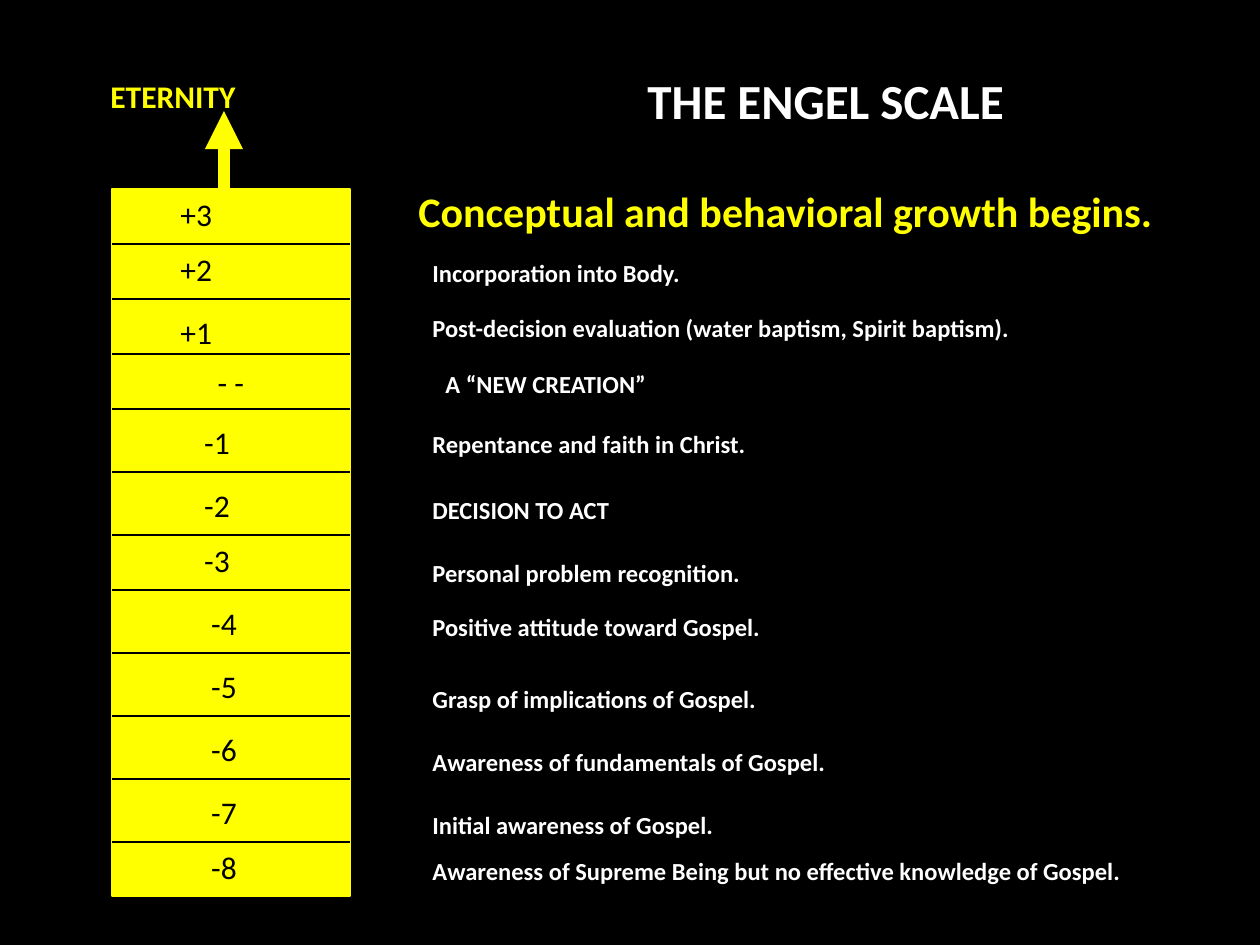
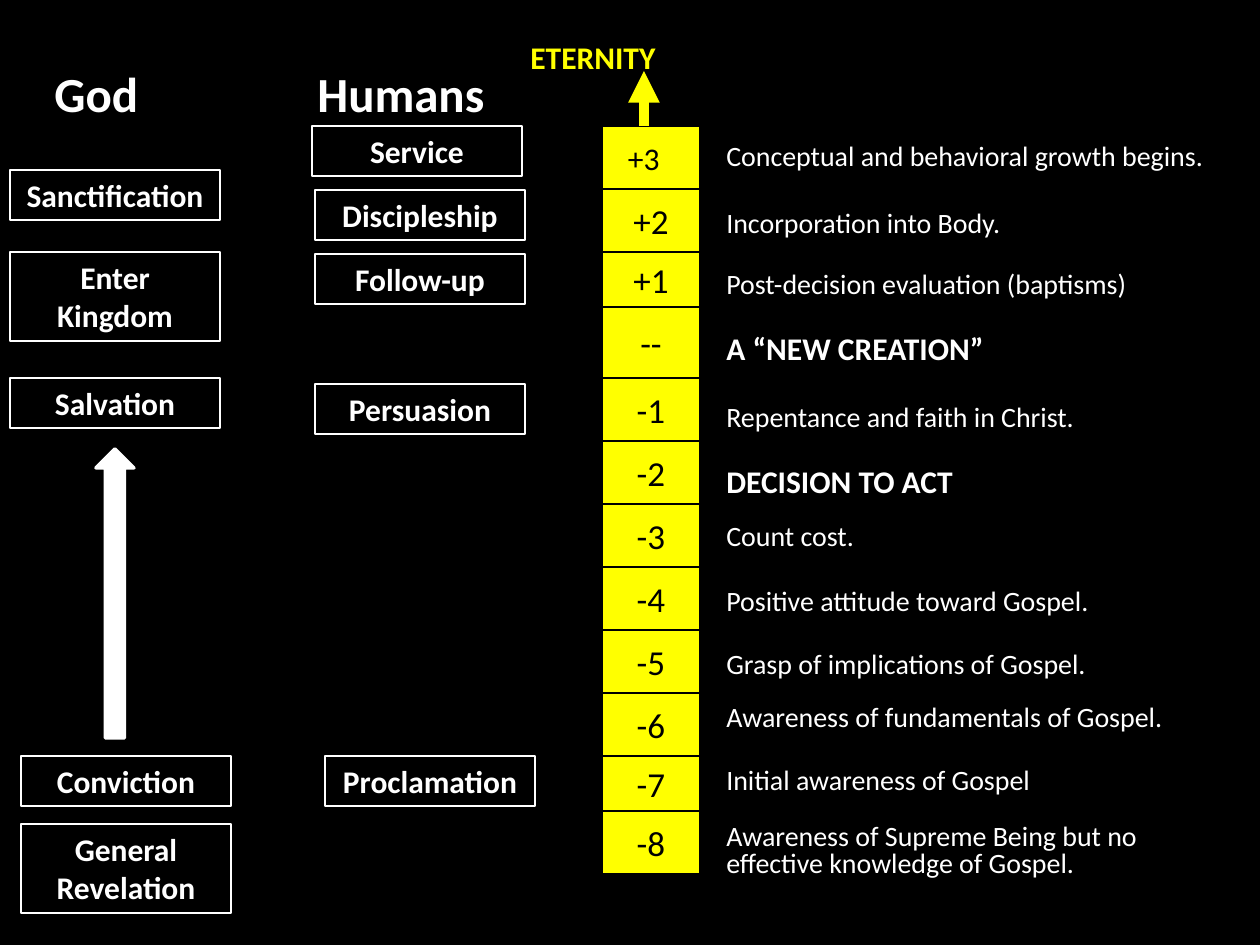
from itertools import accumulate

from lxml import etree
from pptx import Presentation
from pptx.dml.color import RGBColor
from pptx.enum.shapes import MSO_CONNECTOR as CONNECTOR, MSO_SHAPE as SHAPE
from pptx.enum.text import MSO_ANCHOR as ANCHOR, PP_ALIGN as ALIGN
from pptx.oxml.ns import qn
from pptx.util import Emu, Pt

EMU_PER_PX = 914400 / 126
COLORS = {"background": "000000", "scale": "FFFF00", "text": "FFFFFF", "mark": "000000"}

# Font formats
TITLE = {"size": Pt(28), "bold": True}
SUBTITLE = {"size": Pt(24), "bold": True}
HEADING = {"size": Pt(18), "bold": True}
MARK = {"size": Pt(18)}
LARGE_MARK = {"size": Pt(20)}
STAGE = {"size": Pt(14), "bold": True}
PLAIN_STAGE = {"size": Pt(16)}

MARKS = ["+3", "+2", "+1", "--", "-1", "-2", "-3", "-4", "-5", "-6", "-7", "-8"]


def px(length):
    return Emu(round(length * EMU_PER_PX))


def rgb(name):
    return RGBColor.from_string(COLORS[name])


class Deck:
    """Holds the shared style and the slide being drawn."""

    def __init__(self):
        self.presentation = Presentation()
        self.presentation.slide_width = px(1260)
        self.presentation.slide_height = px(945)
        self.slide = None

    def add_slide(self):
        self.slide = self.presentation.slides.add_slide(self.presentation.slide_layouts[6])
        fill = self.slide.background.fill
        fill.solid()
        fill.fore_color.rgb = rgb("background")

    def label(self, shape, text, font, color, align=ALIGN.LEFT, anchor=ANCHOR.TOP, spacing=None):
        frame = shape.text_frame
        frame.word_wrap = True
        frame.vertical_anchor = anchor
        paragraph = frame.paragraphs[0]
        paragraph.text = text
        paragraph.alignment = align
        paragraph.line_spacing = spacing
        for name, value in {"name": "Calibri", "bold": False, **font}.items():
            setattr(paragraph.font, name, value)
        paragraph.font.color.rgb = rgb(color)

    def text(self, text, box, font, color="text", **layout):
        shape = self.slide.shapes.add_textbox(*map(px, box))
        self.label(shape, text, font, color, **layout)

    def block(self, box, fill=None, line="text", kind=SHAPE.RECTANGLE, width=0.75):
        shape = self.slide.shapes.add_shape(kind, *map(px, box))
        shape.shadow.inherit = False
        if fill:
            shape.fill.solid()
            shape.fill.fore_color.rgb = rgb(fill)
        else:
            shape.fill.background()
        shape.line.color.rgb = rgb(line)
        shape.line.width = Pt(width)
        return shape

    def line(self, start, end, color, width=0.75, arrow=False):
        connector = self.slide.shapes.add_connector(
            CONNECTOR.STRAIGHT, *map(px, (*start, *end)))
        connector.line.color.rgb = rgb(color)
        connector.line.width = Pt(width)
        properties = connector._element.spPr
        if arrow:
            etree.SubElement(properties.find(qn("a:ln")), qn("a:tailEnd"), type="triangle")
        etree.SubElement(properties, qn("a:effectLst"))

    def eternity(self, left, top, start, end, width):
        """Label above the scale, with the arrow that rises to it."""
        self.line(start, end, "scale", width, arrow=True)
        self.text("ETERNITY", (left, top, 350, 50), HEADING, "scale")


def build_engel_scale(deck):
    deck.add_slide()
    deck.text("THE ENGEL SCALE", (420, 64, 811, 72), TITLE, align=ALIGN.CENTER)

    # Scale with its dividers
    heights = [55] * 4 + [63, 63, 55] + [63] * 4 + [54]
    tops = list(accumulate(heights[:-1], initial=189))
    deck.block((112, tops[0], 238, sum(heights)), "scale", "scale")
    deck.eternity(98, 71, (224, 189), (224, 111), 7.25)
    for top in tops[1:]:
        deck.line((112, top), (350, top), "mark")

    # Marks: left and width by group, then the drop below each rung's top
    plus, new, near, far = (168, 112), (154, 154), (140, 154), (154, 140)
    columns = [plus] * 3 + [new] + [near] * 3 + [far] * 5
    drops = [0, 0, 8, 3, 8, 8, 0, 8, 8, 8, 8, 0]
    for mark, (left, width), top, drop in zip(MARKS, columns, tops, drops):
        deck.text(mark.replace("--", "- -"), (left, top + drop, width, 50), MARK, "mark",
                  align=ALIGN.LEFT if mark.startswith("+") else ALIGN.CENTER)

    # Stages: text, left, drop below the rung's top
    deck.text("Conceptual and behavioral growth begins.", (406, 179, 784, 63), SUBTITLE, "scale")
    stages = [
        ("Incorporation into Body.", 420, 8),
        ("Post-decision evaluation (water baptism, Spirit baptism).", 420, 8),
        ("A “NEW CREATION”", 433, 9),
        ("Repentance and faith in Christ.", 420, 24),
        ("DECISION TO ACT", 420, 17),
        ("Personal problem recognition.", 420, 17),
        ("Positive attitude toward Gospel.", 420, 16),
        ("Grasp of implications of Gospel.", 420, 25),
        ("Awareness of fundamentals of Gospel.", 420, 25),
        ("Initial awareness of Gospel.", 420, 25),
        ("Awareness of Supreme Being but no effective knowledge of Gospel.", 420, 8),
    ]
    for (stage, left, drop), top in zip(stages, tops[1:]):
        tight = stage.startswith("Repentance")
        deck.text(stage, (left, top + drop, 798, 30 if tight else 43), STAGE,
                  spacing=0.6 if tight else None)


def build_god_and_humans(deck):
    deck.add_slide()

    # Scale cells and stages: text, cell height, drop below the cell's top
    stages = [
        ("Conceptual and behavioral growth begins.", 63, 6),
        ("Incorporation into Body.", 63, 10),
        ("Post-decision evaluation (baptisms)", 55, 8),
        ("A “NEW CREATION”", 71, 16),
        ("Repentance and faith in Christ.", 63, 15),
        ("DECISION TO ACT", 63, 15),
        ("Count cost.", 63, 8),
        ("Positive attitude toward Gospel.", 63, 10),
        ("Grasp of implications of Gospel.", 63, 10),
        ("Awareness of fundamentals of Gospel.", 63, 0),
        ("Initial awareness of Gospel", 55, 0),
        ("Awareness of Supreme Being but no effective knowledge of Gospel.", 63, 8),
    ]
    top = 126
    for mark, (stage, height, drop) in zip(MARKS, stages):
        cell = deck.block((602, top, 98, height), "scale", "mark")
        first, last = mark == MARKS[0], mark == MARKS[-1]
        deck.label(cell, mark, MARK if first else LARGE_MARK, "mark",
                   ALIGN.LEFT if first else ALIGN.CENTER, ANCHOR.MIDDLE)
        if first:
            cell.text_frame.margin_left = px(26)
        deck.text(stage, (714, top + drop, 518, 68 if last else 47),
                  HEADING if stage.isupper() else PLAIN_STAGE, spacing=0.8 if last else None)
        top += height
    deck.eternity(518, 32, (644, 126), (644, 71), 6)

    # Column headings
    for heading, left in (("God", 42), ("Humans", 305)):
        deck.text(heading, (left, 57, 231, 72), TITLE)

    # Roles: text, left, top, height
    roles = [
        ("Sanctification", 10, 170, 50),
        ("Enter Kingdom", 10, 252, 89),
        ("Salvation", 10, 378, 50),
        ("Conviction", 21, 756, 50),
        ("General Revelation", 21, 824, 89),
        ("Service", 312, 126, 50),
        ("Discipleship", 315, 190, 50),
        ("Follow-up", 315, 254, 50),
        ("Persuasion", 315, 384, 50),
        ("Proclamation", 325, 756, 50),
    ]
    for role, left, top, height in roles:
        box = deck.block((left, top, 210, height))
        deck.label(box, role, HEADING, "text", ALIGN.CENTER)

    # Arrow from conviction up to salvation
    deck.block((96, 449, 38, 289), "text", kind=SHAPE.UP_ARROW, width=2)


def main():
    deck = Deck()
    build_engel_scale(deck)
    build_god_and_humans(deck)
    deck.presentation.save("out.pptx")


if __name__ == "__main__":
    main()
